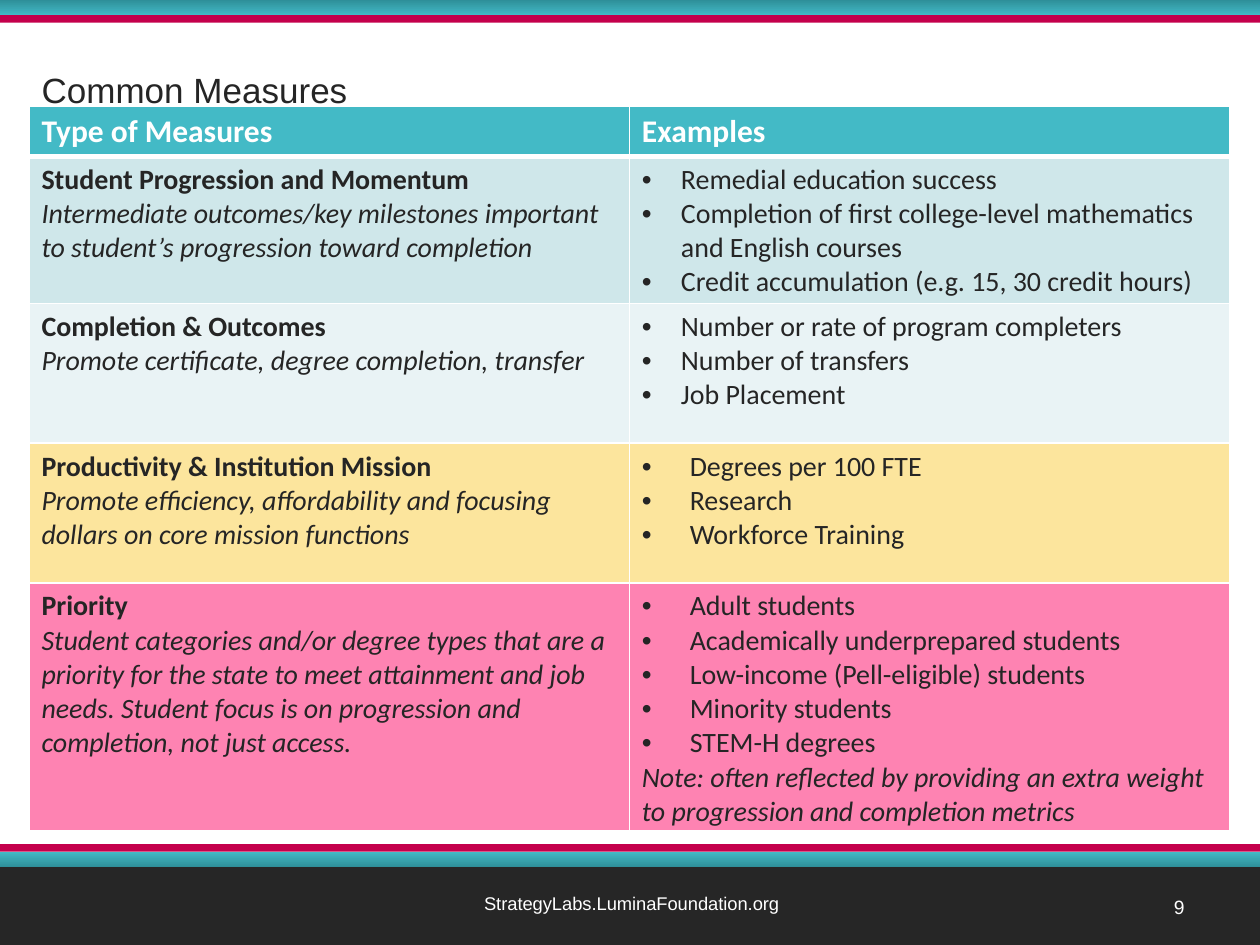
from lxml.etree import SubElement
from pptx import Presentation
from pptx.dml.color import RGBColor
from pptx.enum.shapes import MSO_SHAPE
from pptx.enum.text import MSO_ANCHOR, PP_ALIGN
from pptx.oxml.ns import qn
from pptx.util import Inches, Pt

INK = "252525"
WHITE = "FFFFFF"
TEAL = "43BAC6"
DARK_TEAL = "2E8F99"
CRIMSON = "C4004C"
CHARCOAL = "262626"

HEADERS = ["Type of Measures", "Examples"]
ROW_HEIGHTS = [0.38, 1.11, 1.11, 1.11, 1.87]
MEASURES = [
    {
        "fill": "CFE7EA",
        "indent": 0.31,
        "name": "Student Progression and Momentum",
        "summary": "Intermediate outcomes/key milestones important to student’s "
                   "progression toward completion",
        "examples": [
            "Remedial education success",
            "Completion of first college-level mathematics and English courses",
            "Credit accumulation (e.g. 15, 30 credit hours)",
        ],
    },
    {
        "fill": "E9F3F5",
        "indent": 0.31,
        "same_paragraph": True,
        "name": "Completion & Outcomes",
        "summary": "Promote certificate, degree completion, transfer",
        "examples": [
            "Number or rate of program completers",
            "Number of transfers",
            "Job Placement",
        ],
    },
    {
        "fill": "FCE59D",
        "indent": 0.38,
        "name": "Productivity & Institution Mission",
        "summary": "Promote efficiency, affordability and focusing dollars on "
                   "core mission functions",
        "examples": ["Degrees per 100 FTE", "Research", "Workforce Training"],
    },
    {
        "fill": "FE83B2",
        "indent": 0.38,
        "name": "Priority",
        "summary": "Student categories and/or degree types that are a priority for "
                   "the state to meet attainment and job needs. Student focus is on "
                   "progression and completion, not just access.",
        "examples": [
            "Adult students",
            "Academically underprepared students",
            "Low-income (Pell-eligible) students",
            "Minority students",
            "STEM-H degrees",
        ],
        "note": "Note: often reflected by providing an extra weight to progression "
                "and completion metrics",
    },
]


def color(value):
    """Return the colour for a hex string."""
    return RGBColor.from_string(value)


def add_run(paragraph, text, size=16, font="Calibri", fill=INK, bold=False, italic=False):
    """Add one formatted run to a paragraph."""
    run = paragraph.add_run()
    run.text = text
    run.font.size = Pt(size)
    run.font.name = font
    run.font.bold = bold
    run.font.italic = italic
    run.font.color.rgb = color(fill)


def add_bar(slide, top, height, fill, gradient_end=None, rotation=0):
    """Add a full-width bar with a plain or gradient fill."""
    bar = slide.shapes.add_shape(
        MSO_SHAPE.RECTANGLE, 0, Inches(top), Inches(10), Inches(height))
    bar.shadow.inherit = False
    bar.line.fill.background()
    bar.rotation = rotation
    if gradient_end:
        bar.fill.gradient()
        bar.fill.gradient_angle = 90
        for stop, value in zip(bar.fill.gradient_stops, (fill, gradient_end)):
            stop.color.rgb = color(value)
    else:
        bar.fill.solid()
        bar.fill.fore_color.rgb = color(fill)


def add_label(slide, box, text, size, alignment):
    """Add a white one-line label."""
    frame = slide.shapes.add_textbox(*map(Inches, box)).text_frame
    frame.word_wrap = True
    paragraph = frame.paragraphs[0]
    paragraph.alignment = alignment
    add_run(paragraph, text, size, "Arial", WHITE)


def add_title(slide, text):
    """Place and fill the title placeholder."""
    title = slide.shapes.title
    title.left, title.top, title.width, title.height = map(Inches, (0.23, 0.34, 9.27, 0.74))
    title.text_frame.vertical_anchor = MSO_ANCHOR.MIDDLE
    paragraph = title.text_frame.paragraphs[0]
    paragraph.alignment = PP_ALIGN.LEFT
    add_run(paragraph, text, 20, "Arial")


def add_bullet(paragraph, indent):
    """Give a paragraph a bullet with a hanging indent."""
    properties = paragraph._p.get_or_add_pPr()
    properties.set("marL", str(Inches(indent)))
    properties.set("indent", str(-Inches(indent)))
    SubElement(properties, qn("a:buFont"), typeface="Arial")
    SubElement(properties, qn("a:buChar"), char="•")


def format_cell(cell, fill, top=1, bottom=1):
    """Set the white borders and the fill of a cell."""
    properties = cell._tc.get_or_add_tcPr()
    for side, width in (("L", 1), ("R", 1), ("T", top), ("B", bottom)):
        line = SubElement(properties, qn(f"a:ln{side}"), w=str(Pt(width)))
        solid = SubElement(line, qn("a:solidFill"))
        SubElement(solid, qn("a:srgbClr"), val=WHITE)
    cell.fill.solid()
    cell.fill.fore_color.rgb = color(fill)


def fill_measure(cell, measure):
    """Write the name and summary of a measure."""
    frame = cell.text_frame
    paragraph = frame.paragraphs[0]
    add_run(paragraph, measure["name"], bold=True)
    if measure.get("same_paragraph"):
        paragraph.add_line_break()
    else:
        paragraph = frame.add_paragraph()
    add_run(paragraph, measure["summary"], italic=True)


def fill_examples(cell, measure):
    """Write the bulleted examples and any closing note."""
    frame = cell.text_frame
    for index, example in enumerate(measure["examples"]):
        paragraph = frame.add_paragraph() if index else frame.paragraphs[0]
        add_bullet(paragraph, measure["indent"])
        add_run(paragraph, example)
    if "note" in measure:
        add_run(frame.add_paragraph(), measure["note"], italic=True)


def add_measures_table(slide):
    """Add the table of measures and examples."""
    table = slide.shapes.add_table(
        len(ROW_HEIGHTS), 2, *map(Inches, (0.23, 0.84, 9.53, 5.58))).table
    table.horz_banding = False
    for row, height in zip(table.rows, ROW_HEIGHTS):
        row.height = Inches(height)
    for cell, text in zip(table.rows[0].cells, HEADERS):
        format_cell(cell, TEAL, bottom=3)
        add_run(cell.text_frame.paragraphs[0], text, 18, fill=WHITE, bold=True)
    for index, measure in enumerate(MEASURES, 1):
        name_cell, examples_cell = table.rows[index].cells
        for cell in (name_cell, examples_cell):
            format_cell(cell, measure["fill"], top=3 if index == 1 else 1)
        fill_measure(name_cell, measure)
        fill_examples(examples_cell, measure)


def main():
    """Build and save the slide."""
    presentation = Presentation()
    presentation.slide_width = Inches(10)
    presentation.slide_height = Inches(7.5)
    slide = presentation.slides.add_slide(presentation.slide_layouts[5])
    add_bar(slide, 6.88, 0.62, CHARCOAL)
    add_bar(slide, 6.76, 0.12, DARK_TEAL, TEAL)
    add_bar(slide, 6.7, 0.06, CRIMSON)
    add_bar(slide, 0, 0.12, DARK_TEAL, TEAL, rotation=180)
    add_bar(slide, 0.12, 0.06, CRIMSON, rotation=180)
    add_label(slide, (3.01, 7.03, 4.01, 0.29),
              "StrategyLabs.LuminaFoundation.org", 10.5, PP_ALIGN.CENTER)
    add_title(slide, "Common Measures")
    add_label(slide, (7.17, 7.06, 2.33, 0.4), "9", 11, PP_ALIGN.RIGHT)
    add_measures_table(slide)
    presentation.save("out.pptx")


if __name__ == "__main__":
    main()
